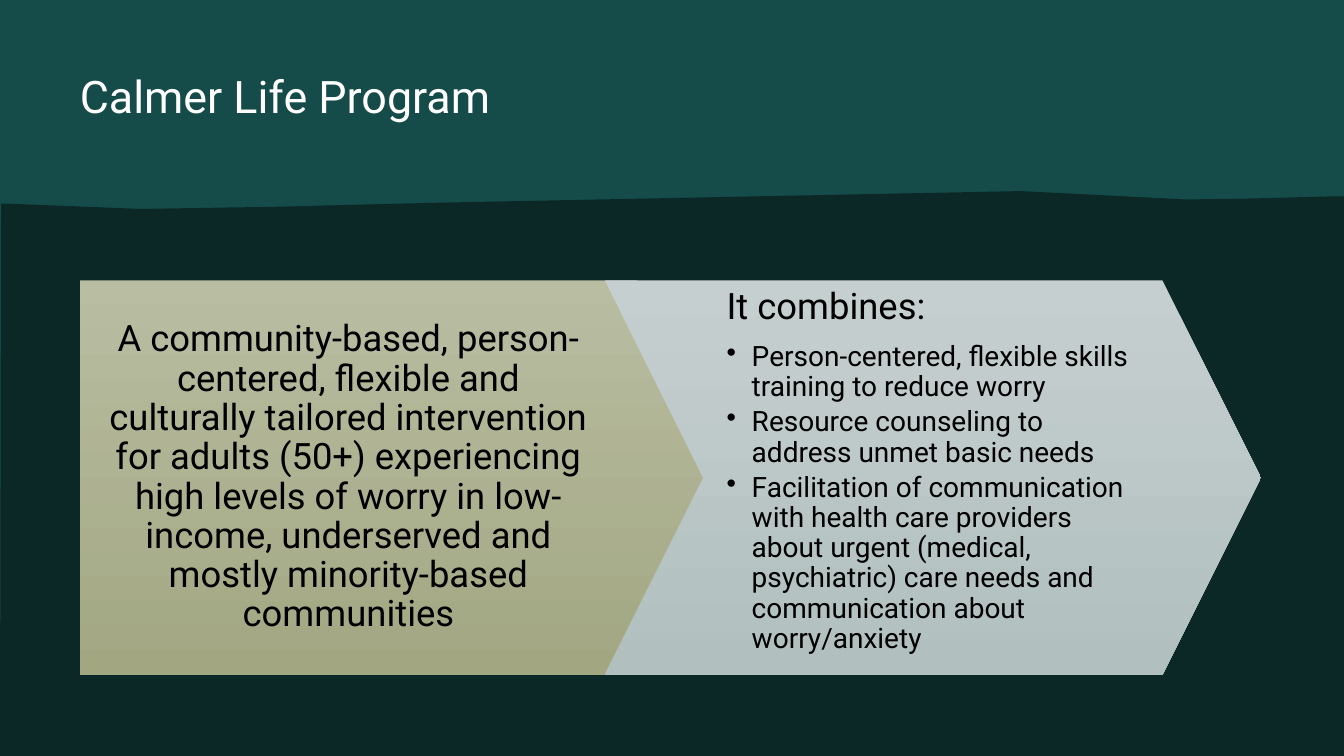
from lxml.etree import SubElement
from pptx import Presentation
from pptx.dml.color import RGBColor
from pptx.enum.shapes import MSO_SHAPE
from pptx.enum.text import MSO_ANCHOR, PP_ALIGN
from pptx.oxml.ns import qn
from pptx.util import Pt

PX = 9525  # EMU per pixel, 96 pixels to the inch
W, H = 1280, 720
THEME = dict(
    font="Roboto", title_size=32, lead_size=26, bullet_size=20,
    dark="0B2827", teal="154C4A", title="FFFFFF", text="000000",
    olive=("B9BDA2", "A2A782"), mist=("C6CFCF", "B1BFBF"),
)


def px(*lengths):
    return [round(n * PX) for n in lengths]


def write(p, text, size, color=THEME["text"], align=PP_ALIGN.LEFT,
          spacing=0.9, after=0, bullet=False):
    """Fill a paragraph with one formatted run, bulleted if asked."""
    r = p.add_run()
    r.text = text
    r.font.name = THEME["font"]
    r.font.size = Pt(size)
    r.font.color.rgb = RGBColor.from_string(color)
    p.alignment = align
    p.line_spacing = spacing
    p.space_before = Pt(0)
    p.space_after = Pt(after)
    if bullet:
        p.level = 1
        pPr = p._p.get_or_add_pPr()
        pPr.set("marL", str(24 * PX))
        pPr.set("indent", str(-24 * PX))
        SubElement(pPr, qn("a:buChar"), char="•")


prs = Presentation()
prs.slide_width, prs.slide_height = px(W, H)
s = prs.slides.add_slide(prs.slide_layouts[5])
s.background.fill.solid()
s.background.fill.fore_color.rgb = RGBColor.from_string(THEME["dark"])

# Title on the teal band
title = s.shapes.title
title.left, title.top, title.width, title.height = px(76, 65, 1126, 72)
tf = title.text_frame
tf.margin_left = tf.margin_top = tf.margin_right = tf.margin_bottom = 0
tf.vertical_anchor = MSO_ANCHOR.TOP
tf.word_wrap = True
write(tf.paragraphs[0], "Calmer Life Program", THEME["title_size"],
      color=THEME["title"], spacing=1.0)

band = s.shapes.add_shape(MSO_SHAPE.RECTANGLE, *px(0, 0, W, H))
title.element.addprevious(band.element)

# Dark ground with an uneven upper edge
edge = [(1, 194), (8, 194), (134, 199), (261, 197), (340, 195), (419, 193),
        (972, 182), (1130, 190), (1193, 189), (1270, 187), (W, 187)]
builder = s.shapes.build_freeform(0, H, scale=PX)
builder.add_line_segments(edge + [(W, H)], close=True)
ground = builder.convert_to_shape()

for shape, color in ((band, THEME["teal"]), (ground, THEME["dark"])):
    shape.shadow.inherit = False
    shape.fill.solid()
    shape.fill.fore_color.rgb = RGBColor.from_string(color)
    shape.line.fill.background()

# Two arrows, each with its text
TOP, ARROW_W, ARROW_H = 267, 625, 376
lead = THEME["lead_size"]
item = dict(size=THEME["bullet_size"], after=3.5, bullet=True)
intro = [
    ("A community-based, person-centered, flexible and culturally tailored "
     "intervention for adults (50+) experiencing high levels of worry in "
     "low-income, underserved and mostly minority-based communities",
     dict(size=lead, align=PP_ALIGN.CENTER)),
]
parts = [
    ("It combines:", dict(size=lead, after=11)),
    ("Person-centered, flexible skills training to reduce worry", item),
    ("Resource counseling to address unmet basic needs", item),
    ("Facilitation of communication with health care providers about urgent "
     "(medical, psychiatric) care needs and communication about "
     "worry/anxiety", item),
]
arrows = [
    (MSO_SHAPE.PENTAGON, 76, THEME["olive"], 76, 578, 88,
     MSO_ANCHOR.MIDDLE, intro),
    (MSO_SHAPE.CHEVRON, 576, THEME["mist"], 670, 437, 22,
     MSO_ANCHOR.TOP, parts),
]
for kind, left, colors, text_left, text_w, right_inset, anchor, paras in arrows:
    arrow = s.shapes.add_shape(kind, *px(left, TOP, ARROW_W, ARROW_H))
    arrow.adjustments[0] = 0.25
    arrow.shadow.inherit = False
    arrow.line.fill.background()
    arrow.fill.gradient()
    arrow.fill.gradient_angle = 270
    for stop, color in zip(arrow.fill.gradient_stops, colors):
        stop.color.rgb = RGBColor.from_string(color)

    tf = s.shapes.add_textbox(*px(text_left, TOP, text_w, ARROW_H)).text_frame
    tf.word_wrap = True
    tf.vertical_anchor = anchor
    tf.margin_left, tf.margin_top, tf.margin_right, tf.margin_bottom = px(
        22, 7, right_inset, 7)
    for i, (text, style) in enumerate(paras):
        p = tf.add_paragraph() if i else tf.paragraphs[0]
        write(p, text, **style)

prs.save("out.pptx")
